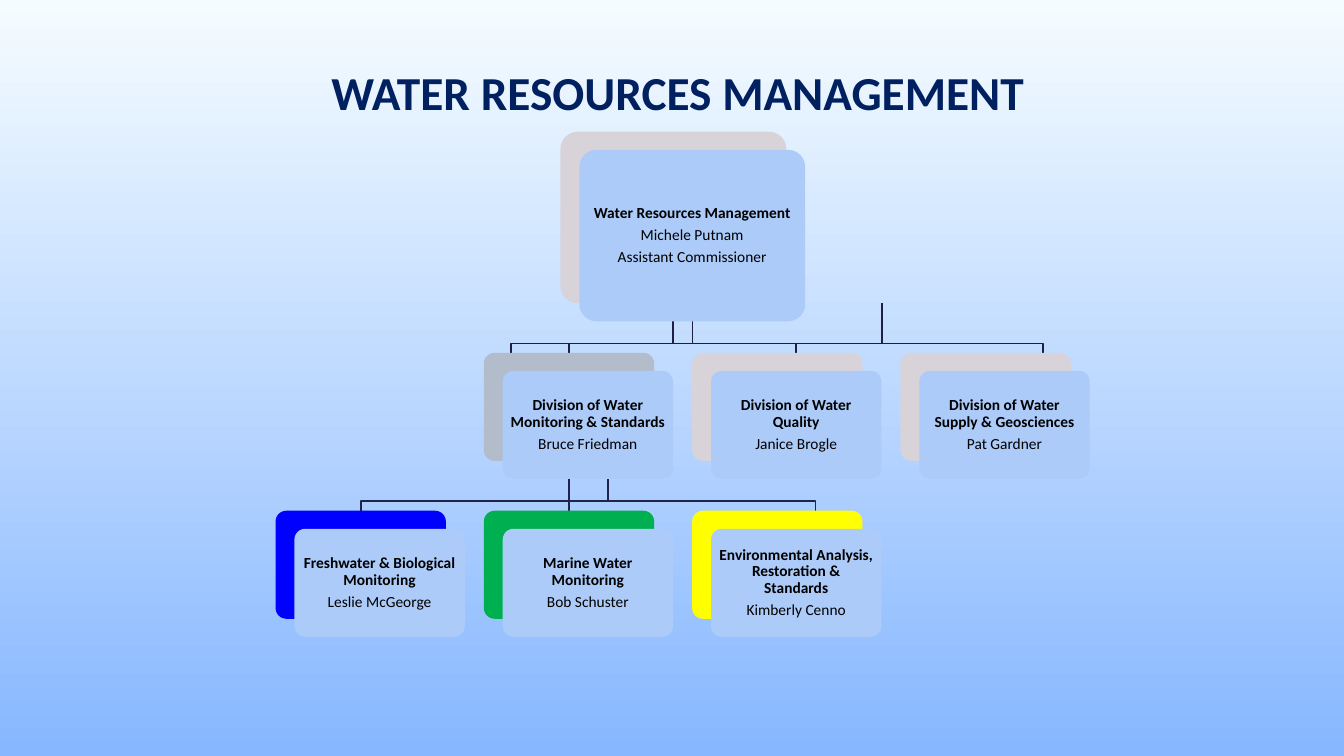
import pptx
import pptx.dml.color
import pptx.enum.shapes
import pptx.enum.text
import pptx.util

Pt = pptx.util.Pt
RGB = pptx.dml.color.RGBColor

SKY_TOP = RGB(0xF5, 0xFC, 0xFF)
SKY_BOTTOM = RGB(0x87, 0xB7, 0xFF)
NAVY = RGB(0x00, 0x20, 0x60)
BLACK = RGB(0x00, 0x00, 0x00)
CARD = RGB(0xAC, 0xCB, 0xF9)
PALE = RGB(0xD8, 0xD3, 0xD9)
GREY = RGB(0xB2, 0xBC, 0xCB)
BLUE = RGB(0x00, 0x00, 0xFF)
GREEN = RGB(0x00, 0xB0, 0x50)
YELLOW = RGB(0xFF, 0xFF, 0x00)
UPPER_LINE = RGB(0x1D, 0x20, 0x42)
LOWER_LINE = RGB(0x21, 0x24, 0x4A)

FONT = "Calibri"
CORNER = 0.1
SHIFT_X, SHIFT_Y = 13.5, 12.9  # front card relative to its backing
FIRST_COLUMN, COLUMN_STEP = 196.8, 148.8
CARD_SIZE = (121.7, 77.2)
DIVISION_TOP, BUREAU_TOP = 252, 364.8
DROP, FALL = 28.8, 42.2  # depth of the crossbar and of the whole connector

DIVISIONS = [
    (1, "Division of Water Monitoring & Standards", "Bruce Friedman", GREY),
    (2, "Division of Water Quality", "Janice Brogle", PALE),
    (3, "Division of Water Supply & Geosciences", "Pat Gardner", PALE),
]
BUREAUS = [
    (0, "Freshwater & Biological Monitoring", "Leslie McGeorge", BLUE),
    (1, "Marine Water Monitoring", "Bob Schuster", GREEN),
    (2, "Environmental Analysis, Restoration & Standards", "Kimberly Cenno", YELLOW),
]
# Start and end of each connector across the page
UPPER_LINKS = [(481, 745.2), (481, 568.8), (494.6, 406.4), (630, 365)]
LOWER_LINKS = [(406.4, 582.5), (406.4, 406.4), (434.2, 257.8)]


def add_span(para, text, size, color, bold):
    span = para.add_run()
    span.text = text
    span.font.name = FONT
    span.font.size = Pt(size)
    span.font.bold = bold
    span.font.color.rgb = color


def add_title(page, left, top, width, height):
    box = page.shapes.add_textbox(Pt(left), Pt(top), Pt(width), Pt(height))
    frame = box.text_frame
    frame.word_wrap = True
    frame.vertical_anchor = pptx.enum.text.MSO_ANCHOR.BOTTOM
    para = frame.paragraphs[0]
    para.alignment = pptx.enum.text.PP_ALIGN.CENTER
    add_span(para, "WATER RESOURCES MANAGEMENT", 33.8, NAVY, True)


def add_links(page, top, links, color):
    for start, end in links:
        if start == end:
            link = page.shapes.add_connector(
                pptx.enum.shapes.MSO_CONNECTOR.STRAIGHT,
                Pt(start), Pt(top), Pt(end), Pt(top + FALL))
            link.element.spPr.get_or_change_to_noFill()
            effects = pptx.oxml.parse_xml(
                '<a:effectLst xmlns:a="http://schemas.openxmlformats.org/drawingml/2006/main"/>')
        else:
            outline = page.shapes.build_freeform(Pt(start), Pt(top))
            outline.add_line_segments(
                [(Pt(start), Pt(top + DROP)), (Pt(end), Pt(top + DROP)),
                 (Pt(end), Pt(top + FALL))], close=False)
            link = outline.convert_to_shape()
            link.fill.background()
            link.shadow.inherit = False
        link.line.color.rgb = color
        link.line.width = Pt(1.25)
        if start == end:
            link.element.spPr.append(effects)


def add_panel(page, left, top, width, height, color):
    panel = page.shapes.add_shape(
        pptx.enum.shapes.MSO_SHAPE.ROUNDED_RECTANGLE,
        Pt(left), Pt(top), Pt(width), Pt(height))
    panel.adjustments[0] = CORNER
    panel.fill.solid()
    panel.fill.fore_color.rgb = color
    panel.line.fill.background()
    panel.shadow.inherit = False
    return panel


def add_card(page, left, top, width, height, backing, lines):
    add_panel(page, left, top, width, height, backing)
    front = add_panel(page, left + SHIFT_X, top + SHIFT_Y, width, height, CARD)
    frame = front.text_frame
    frame.word_wrap = True
    frame.vertical_anchor = pptx.enum.text.MSO_ANCHOR.MIDDLE
    # The rounded corners already push the text inwards
    inset = Pt(5.4 - 0.29 * CORNER * height)
    frame.margin_left = frame.margin_right = inset
    frame.margin_top = frame.margin_bottom = inset
    for index, text in enumerate(lines):
        para = frame.paragraphs[0] if index == 0 else frame.add_paragraph()
        para.alignment = pptx.enum.text.PP_ALIGN.CENTER
        para.line_spacing = 0.9
        para.space_after = Pt(3.85)
        add_span(para, text, 11, BLACK, index == 0)


def add_tier(page, top, members):
    for column, unit, head, backing in members:
        left = FIRST_COLUMN + column * COLUMN_STEP
        add_card(page, left, top, *CARD_SIZE, backing, [unit, head])


def main():
    deck = pptx.Presentation()
    deck.slide_width, deck.slide_height = Pt(960), Pt(540)
    page = deck.slides.add_slide(deck.slide_layouts[6])

    # Background gradient, from top to bottom
    fill = page.background.fill
    fill.gradient()
    fill.gradient_angle = 270
    for stop, color in zip(fill.gradient_stops, (SKY_TOP, SKY_BOTTOM)):
        stop.color.rgb = color

    # Connectors lie behind the cards
    add_links(page, 216.6, UPPER_LINKS, UPPER_LINE)
    add_links(page, 329, LOWER_LINKS, LOWER_LINE)

    # Cards, tier by tier
    add_card(page, 400.3, 94.1, 161.4, 122.5, PALE,
             ["Water Resources Management", "Michele Putnam", "Assistant Commissioner"])
    add_tier(page, DIVISION_TOP, DIVISIONS)
    add_tier(page, BUREAU_TOP, BUREAUS)
    add_title(page, 170, 0, 628.6, 89.3)

    deck.save("out.pptx")


if __name__ == "__main__":
    main()
